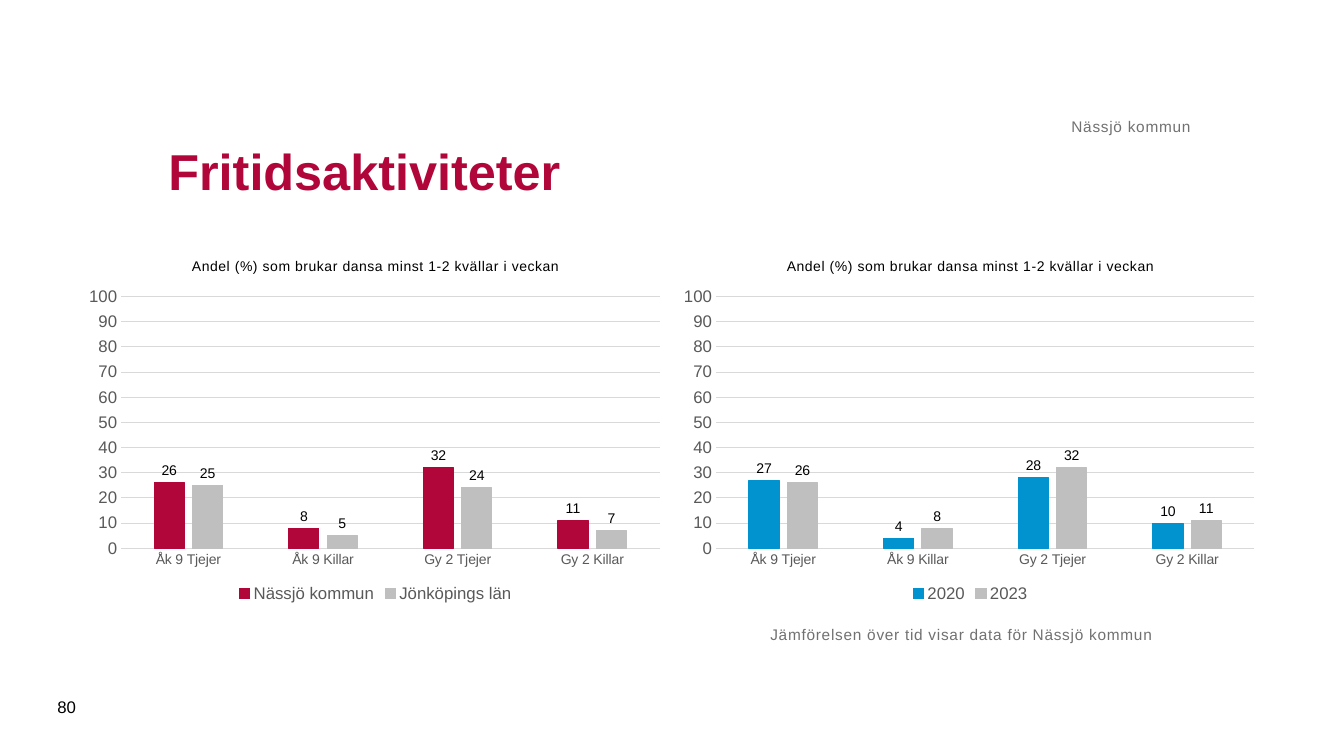
"""Build the leisure activities slide with two column charts for Nässjö kommun."""
from lxml import etree
from pptx import Presentation
from pptx.chart.data import CategoryChartData
from pptx.dml.color import RGBColor
from pptx.enum.chart import XL_CHART_TYPE as ChartType
from pptx.enum.chart import XL_LABEL_POSITION as LabelPosition
from pptx.enum.chart import XL_LEGEND_POSITION as LegendPosition
from pptx.enum.chart import XL_TICK_MARK as TickMark
from pptx.enum.text import MSO_ANCHOR as Anchor
from pptx.enum.text import PP_ALIGN as Align
from pptx.oxml import parse_xml
from pptx.oxml.ns import nsdecls, qn
from pptx.util import Inches, Pt

THEME = {
    "font": "Arial",
    "red": RGBColor.from_string("B1063A"),
    "blue": RGBColor.from_string("0093D0"),
    "silver": RGBColor.from_string("BFBFBF"),
    "grid": RGBColor.from_string("D9D9D9"),
    "axis": RGBColor.from_string("595959"),
    "note": RGBColor.from_string("717171"),
    "black": RGBColor.from_string("000000"),
    "title_size": Pt(36),
    "large": Pt(12),
    "note_size": Pt(11),
    "small": Pt(10),
    "hairline": Pt(0.75),
    "spacing": "50",
}
NUMBER_FORMAT = "#,##0;#,##0"


def style_font(font, size, color, bold=False):
    for name, value in {"name": THEME["font"], "size": THEME[size], "bold": bold}.items():
        setattr(font, name, value)
    font.color.rgb = THEME[color]


def style_line(line, color):
    line.color.rgb = color
    line.width = THEME["hairline"]


deck = Presentation()
deck.slide_width, deck.slide_height = Inches(13.33), Inches(7.5)
page = deck.slides.add_slide(deck.slide_layouts[5])

categories = ["Åk 9 Tjejer", "Åk 9 Killar", "Gy 2 Tjejer", "Gy 2 Killar"]
comparisons = [
    (0.79, [("Nässjö kommun", [26, 8, 32, 11], "red"),
            ("Jönköpings län", [25, 5, 24, 7], "silver")]),
    (6.69, [("2020", [27, 4, 28, 10], "blue"),
            ("2023", [26, 8, 32, 11], "silver")]),
]
plot_area = {"x": 0.07, "y": 0.15, "w": 0.91, "h": 0.69}

for left, columns in comparisons:
    data = CategoryChartData()
    data.categories = categories
    for name, values, color in columns:
        data.add_series(name, values)
    chart = page.shapes.add_chart(
        ChartType.COLUMN_CLUSTERED, Inches(left), Inches(2.4), Inches(5.87), Inches(3.62), data
    ).chart
    style_font(chart.font, "small", "black")

    heading = chart.chart_title.text_frame
    heading.text = "Andel (%) som brukar dansa minst 1-2 kvällar i veckan"
    span = heading.paragraphs[0].runs[0]
    style_font(span.font, "small", "black")
    span.font._element.set("spc", THEME["spacing"])
    chart.chart_title.include_in_layout = False

    chart.has_legend = True
    chart.legend.position = LegendPosition.BOTTOM
    chart.legend.include_in_layout = False
    style_font(chart.legend.font, "large", "axis")

    for axis, size in ((chart.category_axis, "small"), (chart.value_axis, "large")):
        axis.major_tick_mark = axis.minor_tick_mark = TickMark.NONE
        style_font(axis.tick_labels.font, size, "axis")
    style_line(chart.category_axis.format.line, THEME["grid"])
    scale = chart.value_axis
    scale.minimum_scale, scale.maximum_scale, scale.major_unit = 0, 100, 10
    scale.tick_labels.number_format = NUMBER_FORMAT
    scale.tick_labels.number_format_is_linked = False
    scale.format.line.fill.background()
    style_line(scale.major_gridlines.format.line, THEME["grid"])

    plot = chart.plots[0]
    plot.gap_width, plot.overlap, plot.vary_by_categories = 219, -27, False
    for series, (name, values, color) in zip(plot.series, columns):
        series.format.fill.solid()
        series.format.fill.fore_color.rgb = THEME[color]
        style_line(series.format.line, THEME[color])
        labels = series.data_labels
        labels.show_value = True
        labels.position = LabelPosition.OUTSIDE_END
        labels.number_format = NUMBER_FORMAT
        labels.number_format_is_linked = False
        style_font(labels.font, "small", "black")

    area = chart._chartSpace.chart.plotArea
    for layout in area.findall(qn("c:layout")):
        area.remove(layout)
    layout = parse_xml(f"<c:layout {nsdecls('c')}><c:manualLayout/></c:layout>")
    settings = {"layoutTarget": "inner", "xMode": "edge", "yMode": "edge", **plot_area}
    for tag, value in settings.items():
        etree.SubElement(layout[0], qn(f"c:{tag}")).set("val", str(value))
    area.insert(0, layout)

title = page.shapes.title
for side, length in {"left": 1.57, "top": 0.98, "width": 10.24, "height": 1.42}.items():
    setattr(title, side, Inches(length))
title.text_frame.text = "Fritidsaktiviteter"
title.text_frame.vertical_anchor = Anchor.MIDDLE
title.text_frame.paragraphs[0].alignment = Align.LEFT
style_font(title.text_frame.paragraphs[0].runs[0].font, "title_size", "red", True)

notes = [
    ("Nässjö kommun", (1.57, 0.62, 10.24, 0.73), Anchor.BOTTOM, Align.RIGHT, "note_size", "note"),
    ("80", (0.47, 6.81, 0.57, 0.4), Anchor.MIDDLE, Align.LEFT, "large", "black"),
    ("Jämförelsen över tid visar data för Nässjö kommun", (7.64, 6.2, 5.31, 0.94),
     Anchor.TOP, Align.LEFT, "note_size", "note"),
]
for text, place, anchor, alignment, size, color in notes:
    frame = page.shapes.add_textbox(*map(Inches, place)).text_frame
    frame.word_wrap = True
    frame.vertical_anchor = anchor
    para = frame.paragraphs[0]
    para.alignment = alignment
    span = para.add_run()
    span.text = text
    style_font(span.font, size, color)
    if color == "note":
        span.font._element.set("spc", THEME["spacing"])
        for side in ("left", "top", "right", "bottom"):
            setattr(frame, f"margin_{side}", 0)

deck.save("out.pptx")
